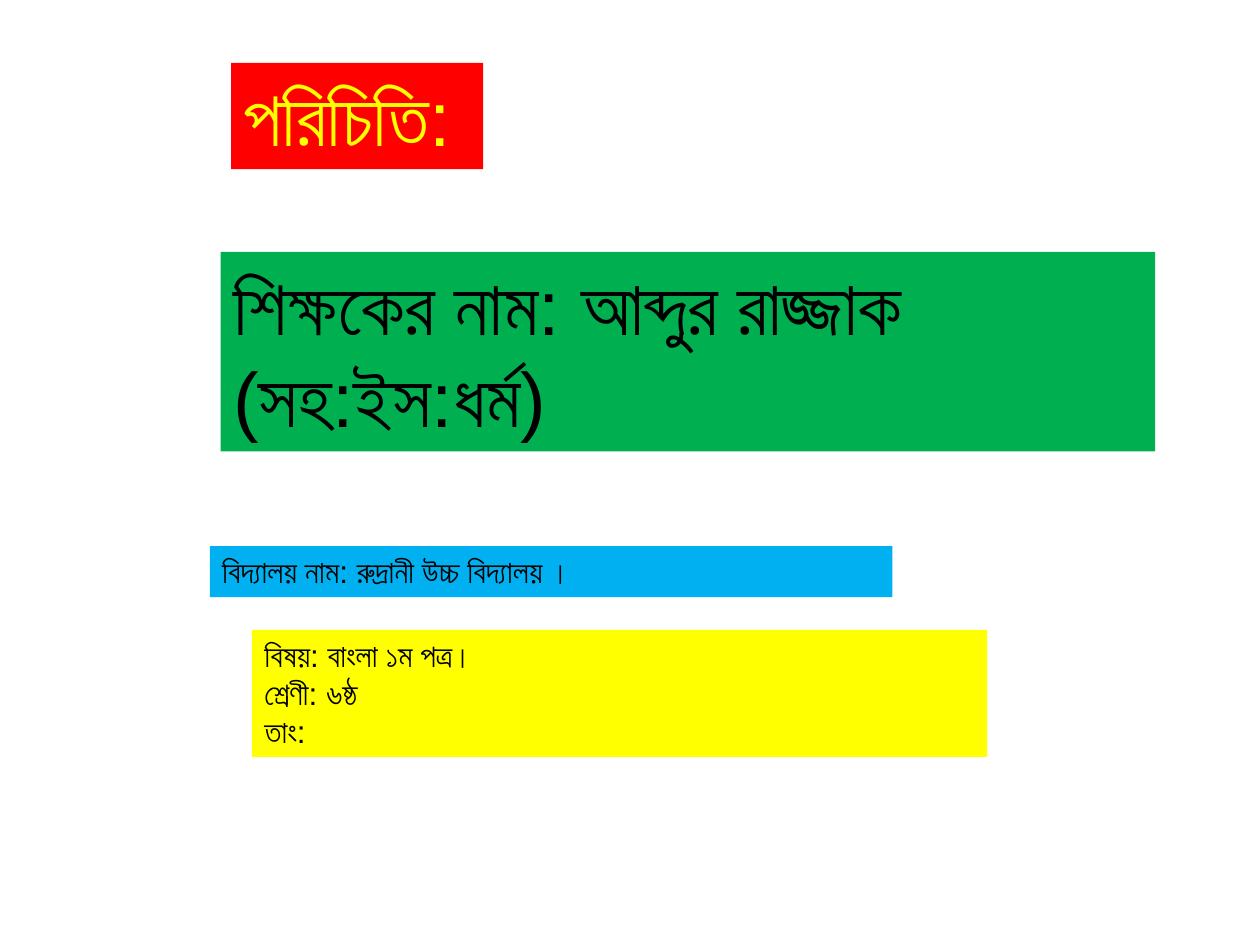
from pptx import Presentation
from pptx.dml.color import RGBColor
from pptx.enum.text import MSO_AUTO_SIZE
from pptx.util import Cm, Pt

GROW = MSO_AUTO_SIZE.SHAPE_TO_FIT_TEXT


def rgb(value):
    return RGBColor.from_string(value)


prs = Presentation()
prs.slide_width = Cm(25.4)
prs.slide_height = Cm(19.05)
s = prs.slides.add_slide(prs.slide_layouts[6])

boxes = [
    (4.66, 1.27, 5.08, 2.14, "FF0000", "FFFF00", 44, ["পরিচিতি:"]),
    (4.45, 5.08, 18.84, 4.02, "00B050", "000000", 44,
     ["শিক্ষকের নাম: আব্দুর রাজ্জাক (সহ:ইস:ধর্ম)"]),
    (4.23, 11.01, 13.76, 1.03, "00B0F0", "000000", 18,
     ["বিদ্যালয় নাম: রুদ্রানী উচ্চ বিদ্যালয় ।"]),
    (5.08, 12.7, 14.82, 2.56, "FFFF00", "000000", 18,
     ["বিষয়: বাংলা ১ম পত্র।", "শ্রেণী: ৬ষ্ঠ", "তাং:"]),
]

for left, top, width, height, fill, color, size, lines in boxes:
    sp = s.shapes.add_textbox(Cm(left), Cm(top), Cm(width), Cm(height))
    sp.fill.solid()
    sp.fill.fore_color.rgb = rgb(fill)
    tf = sp.text_frame
    tf.word_wrap = True
    tf.auto_size = GROW
    tf.text = "\n".join(lines)
    for p in tf.paragraphs:
        p.font.name = "Arial"
        p.font.size = Pt(size)
        p.font.color.rgb = rgb(color)

prs.save("out.pptx")
